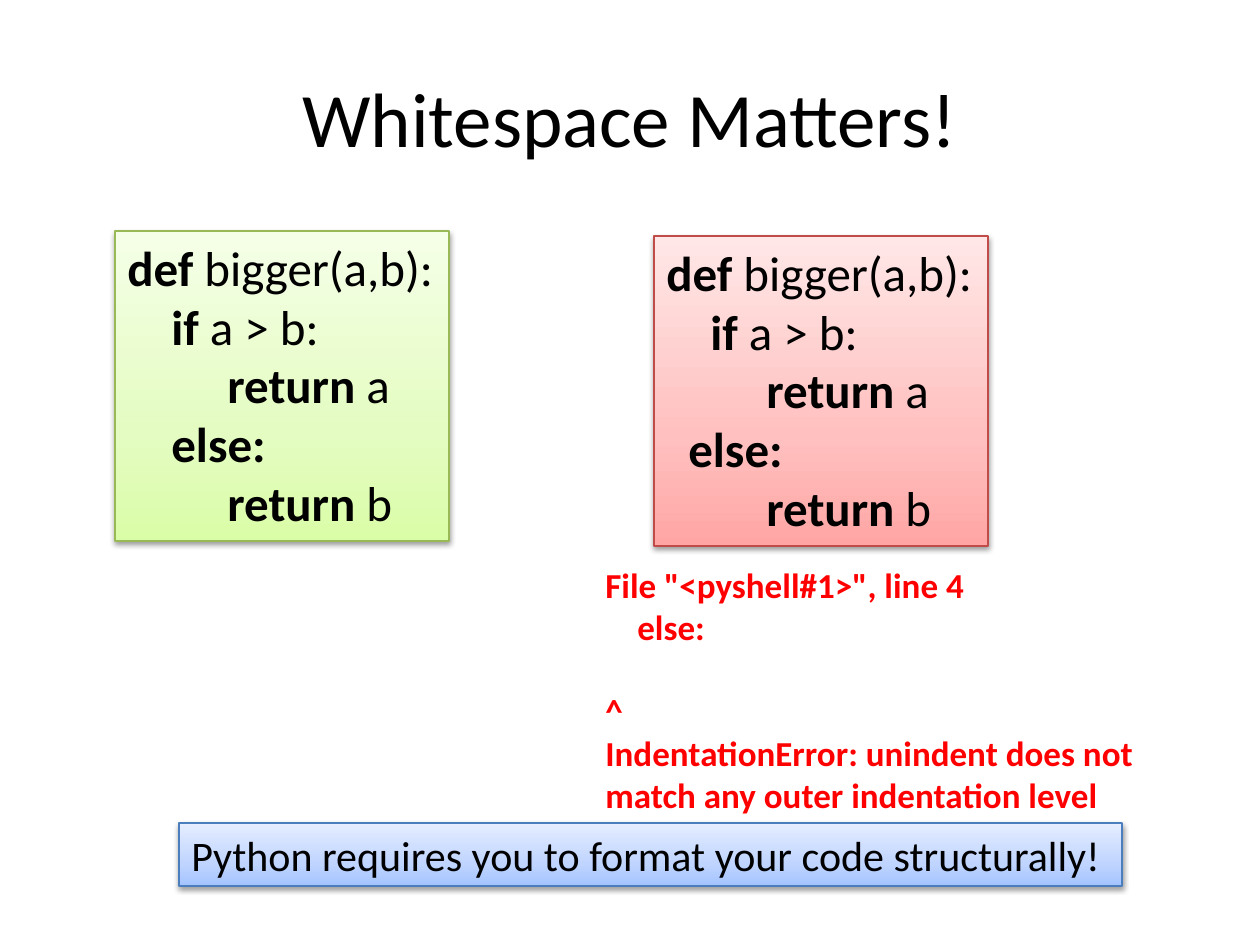
import lxml.etree
import pptx
import pptx.dml.color
import pptx.enum.shapes
import pptx.enum.text
import pptx.oxml
import pptx.oxml.ns
import pptx.util

PX = 914400 / 126
COLORS = {"text": "000000", "error": "FF0000", "shadow": "000000"}
# Line colour, then gradient stops from bottom to top
THEMES = {
    "green": ("98B955", ("DAFDA7", "E4FCC2", "F5FFE7")),
    "red": ("BF4C48", ("FFA6A5", "FFC0BF", "FFE7E7")),
    "blue": ("4B7EBC", ("A4C4FF", "BFD4FF", "E6EEFF")),
}
STOPS = (0, 35, 100)


def bigger_code(else_indent):
    """Lines as (indent in px, bold text, plain text)."""
    return [
        (0, "def ", "bigger(a,b):"),
        (44, "if ", "a > b:"),
        (100, "return", " a"),
        (else_indent, "else:", ""),
        (100, "return", " b"),
    ]


TITLE = [(0, "", "Whitespace Matters!")]
ERROR = [
    (0, 'File "<pyshell#1>", line 4', ""),
    (32, "else:", ""),
    (0, "^", ""),
    (0, "IndentationError: unindent does not match any outer indentation level", ""),
]
RULE = [(0, "", "Python requires you to format your code structurally!")]
PANELS = [
    ("green", (115, 231, 334, 310), 28, bigger_code(44)),
    ("red", (654, 236, 334, 310), 28, bigger_code(22)),
    ("blue", (179, 823, 943, 63), 24, RULE),
]

A = 'xmlns:a="http://schemas.openxmlformats.org/drawingml/2006/main"'
SHADOW = (f'<a:effectLst {A}><a:outerShdw blurRad="40000" dist="20000" dir="5400000" '
          f'rotWithShape="0"><a:srgbClr val="{COLORS["shadow"]}"><a:alpha val="38000"/>'
          '</a:srgbClr></a:outerShdw></a:effectLst>')


def px(*values):
    return [pptx.util.Emu(round(v * PX)) for v in values]


def rgb(value):
    return pptx.dml.color.RGBColor.from_string(value)


def write(sp, lines, size, color="text", **frame):
    tf = sp.text_frame
    for name, value in frame.items():
        setattr(tf, name, value)
    for i, (indent, *parts) in enumerate(lines):
        p = tf.paragraphs[0] if i == 0 else tf.add_paragraph()
        p.alignment = pptx.enum.text.PP_ALIGN.LEFT
        if indent:
            p._p.get_or_add_pPr().set("marL", str(px(indent)[0]))
        for text, bold in zip(parts, (True, False)):
            if not text:
                continue
            r = p.add_run()
            r.text = text
            style = {"name": "Calibri", "size": pptx.util.Pt(size), "bold": bold}
            for name, value in style.items():
                setattr(r.font, name, value)
            r.font.color.rgb = rgb(COLORS[color])
    return tf


def add_panel(shapes, theme, box):
    """Add a rectangle with a three-stop gradient and a soft shadow."""
    line, stops = THEMES[theme]
    sp = shapes.add_shape(pptx.enum.shapes.MSO_SHAPE.RECTANGLE, *px(*box))
    sp.fill.gradient()
    sp.fill.gradient_angle = 90
    spPr = sp._element.spPr
    gs_list = spPr.find(".//" + pptx.oxml.ns.qn("a:gsLst"))
    for gs in list(gs_list):
        gs_list.remove(gs)
    for pos, color in zip(STOPS, stops):
        gs_list.append(pptx.oxml.parse_xml(
            f'<a:gs {A} pos="{pos * 1000}"><a:srgbClr val="{color}"/></a:gs>'))
    sp.line.color.rgb = rgb(line)
    sp.line.width = pptx.util.Pt(0.75)
    spPr.append(pptx.oxml.parse_xml(SHADOW))
    return sp


def main():
    prs = pptx.Presentation()
    prs.slide_width, prs.slide_height = px(1260, 945)
    shapes = prs.slides.add_slide(prs.slide_layouts[6]).shapes
    anchor = pptx.enum.text.MSO_ANCHOR
    grow = pptx.enum.text.MSO_AUTO_SIZE.SHAPE_TO_FIT_TEXT

    title = shapes.add_textbox(*px(63, 38, 1134, 157))
    tf = write(title, TITLE, 44, word_wrap=True, vertical_anchor=anchor.MIDDLE)
    tf.paragraphs[0].alignment = pptx.enum.text.PP_ALIGN.CENTER

    for theme, box, size, lines in PANELS:
        write(add_panel(shapes, theme, box), lines, size,
              word_wrap=False, auto_size=grow, vertical_anchor=anchor.TOP)

    error = shapes.add_textbox(*px(593, 557, 630, 267))
    tf = write(error, ERROR, 20, "error", word_wrap=True, auto_size=grow)
    tf.paragraphs[2].space_before = pptx.util.Pt(24)

    prs.save("out.pptx")


if __name__ == "__main__":
    main()
